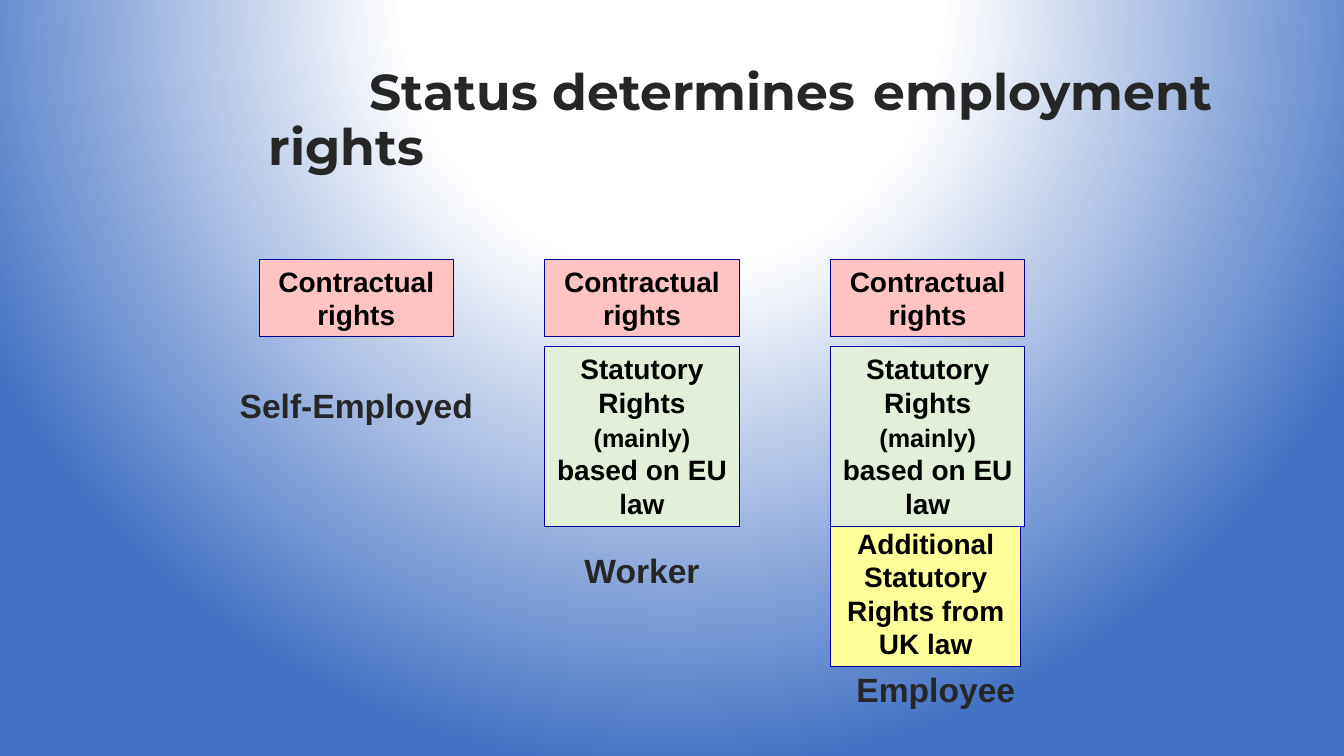
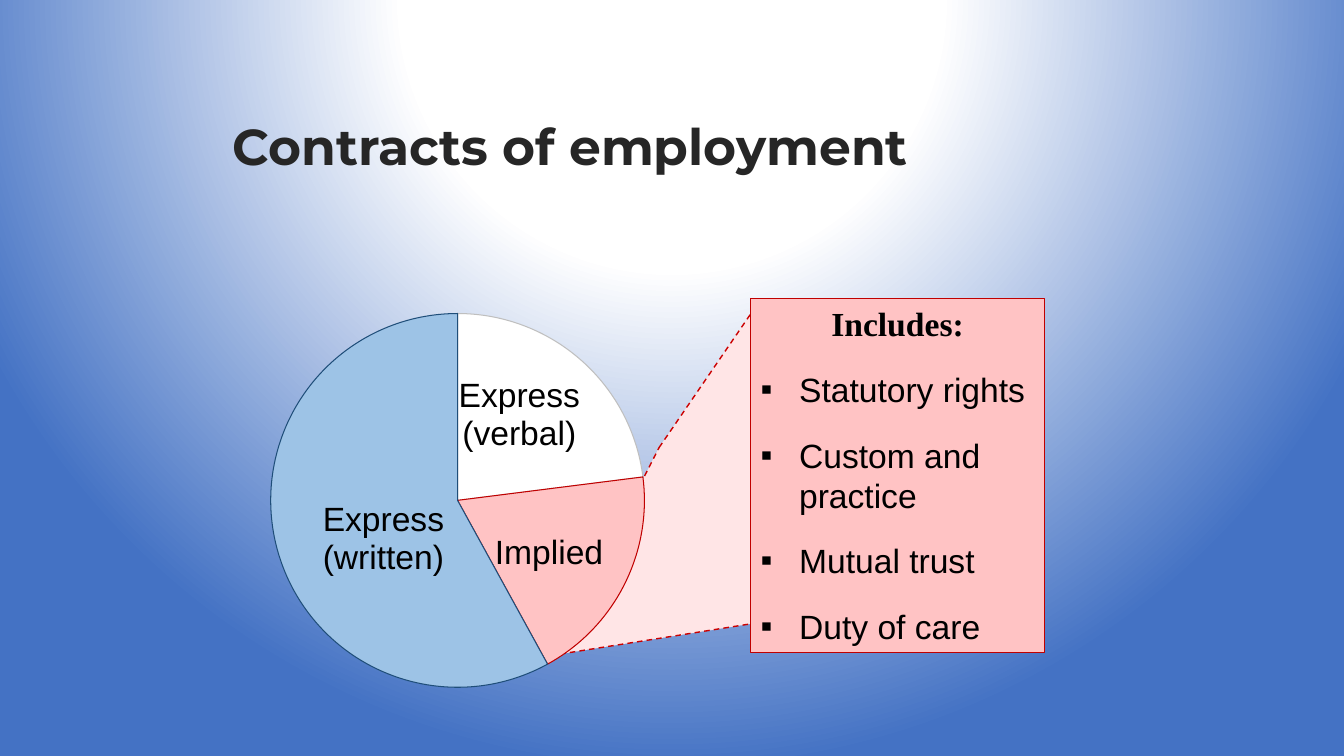
from pptx import Presentation
from pptx.chart.data import CategoryChartData
from pptx.dml.color import RGBColor
from pptx.enum.chart import XL_CHART_TYPE, XL_LABEL_POSITION
from pptx.enum.dml import MSO_LINE
from pptx.enum.shapes import MSO_SHAPE
from pptx.enum.text import MSO_ANCHOR, MSO_AUTO_SIZE, PP_ALIGN
from pptx.oxml import parse_xml
from pptx.oxml.ns import nsdecls, qn
from pptx.util import Cm, Pt

INK, BLACK, WHITE = "262626", "000000", "FFFFFF"
PINK, GREEN, YELLOW, BLUE = "FFC3C4", "E2F0D9", "FFFF99", "9DC3E6"
PALE_PINK, NAVY, RED, DARK_RED = "FFE5E6", "000099", "CC0000", "C00000"
BACKGROUND_STOPS = [(0, WHITE), (35, WHITE), (100, "4472C4")]

TITLE = {"name": "Montserrat", "size": Pt(36), "bold": True}
BOX = {"name": "Arial", "size": Pt(20), "bold": True}
SMALL = {**BOX, "size": Pt(18)}
LABEL = {**BOX, "size": Pt(24)}
BODY = {**LABEL, "bold": False}
HEADING = {**LABEL, "name": "Times New Roman"}


def rgb(value):
    return RGBColor.from_string(value)


def apply(target, fmt):
    for name, value in fmt.items():
        setattr(target, name, value)


def set_font(font, fmt, color=BLACK):
    apply(font, fmt)
    font.color.rgb = rgb(color)


def add_run(p, text, fmt, color=BLACK):
    r = p.add_run()
    r.text = text
    set_font(r.font, fmt, color)


def paint(sp, fill, line, width=0.75):
    sp.shadow.inherit = False
    sp.fill.solid()
    sp.fill.fore_color.rgb = rgb(fill)
    sp.line.color.rgb = rgb(line)
    sp.line.width = Pt(width)


def set_background(master):
    """Fill the master with a radial gradient centred above the slide."""
    master.background.fill.gradient()
    stops = "".join(
        f'<a:gs pos="{pos * 1000}"><a:srgbClr val="{color}"/></a:gs>'
        for pos, color in BACKGROUND_STOPS)
    gradient = parse_xml(
        f'<a:gradFill rotWithShape="1" {nsdecls("a")}><a:gsLst>{stops}</a:gsLst>'
        '<a:path path="circle"><a:fillToRect l="50000" t="-80000" '
        'r="50000" b="180000"/></a:path></a:gradFill>')
    old = next(master.element.iter(qn("a:gradFill")))
    old.getparent().replace(old, gradient)


def add_text(s, box, text, fmt, **frame):
    sp = s.shapes.add_textbox(*map(Cm, box))
    tf = sp.text_frame
    apply(tf, {"word_wrap": True, **frame})
    p = tf.paragraphs[0]
    add_run(p, text, fmt, INK)
    return p


def add_title(s, box, text):
    p = add_text(s, box, text, TITLE, vertical_anchor=MSO_ANCHOR.MIDDLE)
    p.line_spacing = 0.9
    p._p.get_or_add_pPr().append(parse_xml(
        f'<a:tabLst {nsdecls("a")}><a:tab pos="{Cm(2.54)}" algn="l"/></a:tabLst>'))


def add_label(s, box, text):
    add_text(s, box, text, LABEL).alignment = PP_ALIGN.CENTER


def add_box(s, box, fill, line):
    """Add an outlined rectangle and return its text frame."""
    sp = s.shapes.add_shape(MSO_SHAPE.RECTANGLE, *map(Cm, box))
    paint(sp, fill, line)
    tf = sp.text_frame
    apply(tf, {"word_wrap": True, "vertical_anchor": MSO_ANCHOR.TOP,
               "auto_size": MSO_AUTO_SIZE.SHAPE_TO_FIT_TEXT})
    return tf


def add_rights(s, box, fill, paragraphs):
    """Add a box of rights; each paragraph is a list of (text, format)."""
    tf = add_box(s, box, fill, NAVY)
    for i, runs in enumerate(paragraphs):
        p = tf.add_paragraph() if i else tf.paragraphs[0]
        p.alignment = PP_ALIGN.CENTER
        for text, fmt in runs:
            add_run(p, text, fmt)


def status_slide(s):
    add_title(s, (6.53, 1.07, 24.64, 3.99),
              "\tStatus determines \temployment rights")
    top, width = 6.53, 4.9
    self_employed, worker, employee = (6.53 + 7.2 * i for i in range(3))
    for left in (self_employed, worker, employee):
        add_rights(s, (left, top, width, 1.96), PINK,
                   [[("Contractual", BOX)], [("rights", BOX)]])
    add_rights(s, (employee, top + 6.6, 4.8, 3.66), YELLOW,
               [[("Additional Statutory Rights from UK law", BOX)]])
    for left in (worker, employee):
        add_rights(s, (left, top + 2.21, width, 4.52), GREEN,
                   [[("Statutory Rights ", BOX), ("(mainly)", SMALL),
                     (" based on EU law", BOX)]])
    add_label(s, (self_employed - 1.45, top + 3.05, 7.8, 1.27), "Self-Employed")
    add_label(s, (worker, top + 7.19, width, 1.27), "Worker")
    add_label(s, (employee, top + 10.21, 5.31, 1.27), "Employee")


def add_callout(s, points):
    (x, y), *rest = [(Cm(x), Cm(y)) for x, y in points]
    builder = s.shapes.build_freeform(x, y)
    builder.add_line_segments(rest, close=True)
    sp = builder.convert_to_shape()
    paint(sp, PALE_PINK, RED, 1)
    sp.line.dash_style = MSO_LINE.DASH


def layout_xml(**values):
    """Build a manual chart layout; values are in schema order."""
    body = "".join(f'<c:{k} val="{v}"/>' for k, v in values.items())
    return parse_xml(f'<c:layout {nsdecls("c")}><c:manualLayout>{body}'
                     '</c:manualLayout></c:layout>')


def add_pie(s, box):
    data = CategoryChartData()
    data.categories = ["Verbal", "Implied", "Written"]
    data.add_series("Series 1", (23, 19, 58))
    chart = s.shapes.add_chart(XL_CHART_TYPE.PIE, *map(Cm, box), data).chart
    apply(chart, {"has_legend": False, "has_title": False})
    set_font(chart.font, BODY)
    plot = chart.plots[0]
    plot.vary_by_categories = False

    slices = [(WHITE, "BFBFBF", "Express (verbal)"), (PINK, DARK_RED, "Implied"),
              (BLUE, "1F4E79", "Express (written)")]
    for i, (fill, line, text) in enumerate(slices):
        point = plot.series[0].points[i]
        point.format.fill.solid()
        point.format.fill.fore_color.rgb = rgb(fill)
        point.format.line.color.rgb = rgb(line)
        point.format.line.width = Pt(0.75)
        label = point.data_label
        add_run(label.text_frame.paragraphs[0], text, BODY)
        label.position = XL_LABEL_POSITION.CENTER

    nudges = [(0, -0.03), (0.01, 0.02), (0.02, 0.03)]
    for label, (x, y) in zip(chart.element.iter(qn("c:dLbl")), nudges):
        label.find(qn("c:idx")).addnext(layout_xml(x=x, y=y))

    area = next(chart.element.iter(qn("c:plotArea")))
    for old in area.findall(qn("c:layout")):
        area.remove(old)
    area.insert(0, layout_xml(layoutTarget="inner", xMode="edge", yMode="edge",
                              x=0.26, y=0.18, w=0.47, h=0.74))
    chart.element.find(qn("c:chart")).addnext(parse_xml(
        f'<c:spPr {nsdecls("c", "a")}><a:noFill/><a:ln><a:noFill/></a:ln></c:spPr>'))


def add_includes(s, box, heading, items):
    tf = add_box(s, box, PINK, DARK_RED)
    p = tf.paragraphs[0]
    apply(p, {"alignment": PP_ALIGN.CENTER, "space_after": Pt(12)})
    add_run(p, heading, HEADING)
    for item in items:
        p = tf.add_paragraph()
        apply(p, {"alignment": PP_ALIGN.LEFT, "space_before": Pt(6),
                  "space_after": Pt(12)})
        pPr = p._p.get_or_add_pPr()
        pPr.set("marL", str(Cm(0.97)))
        pPr.set("indent", str(-Cm(0.97)))
        pPr.append(parse_xml(f'<a:buFont {nsdecls("a")} typeface="Arial"/>'))
        pPr.append(parse_xml(f'<a:buChar {nsdecls("a")} char="▪"/>'))
        add_run(p, item, BODY)


def contracts_slide(s):
    add_title(s, (5.62, 1.93, 27.9, 3.68), "Contracts of employment")
    add_callout(s, [(16.61, 11.28), (19.05, 7.72), (19.05, 15.7), (13.94, 16.51)])
    add_pie(s, (1.27, 5.61, 20.73, 12.73))
    add_includes(s, (18.92, 7.52, 7.4, 8.92), "Includes:",
                 ["Statutory rights", "Custom and practice", "Mutual trust",
                  "Duty of care"])


def main():
    prs = Presentation()
    apply(prs, {"slide_width": Cm(33.87), "slide_height": Cm(19.05)})
    set_background(prs.slide_master)
    for build in (status_slide, contracts_slide):
        build(prs.slides.add_slide(prs.slide_layouts[6]))
    prs.save("out.pptx")


if __name__ == "__main__":
    main()
